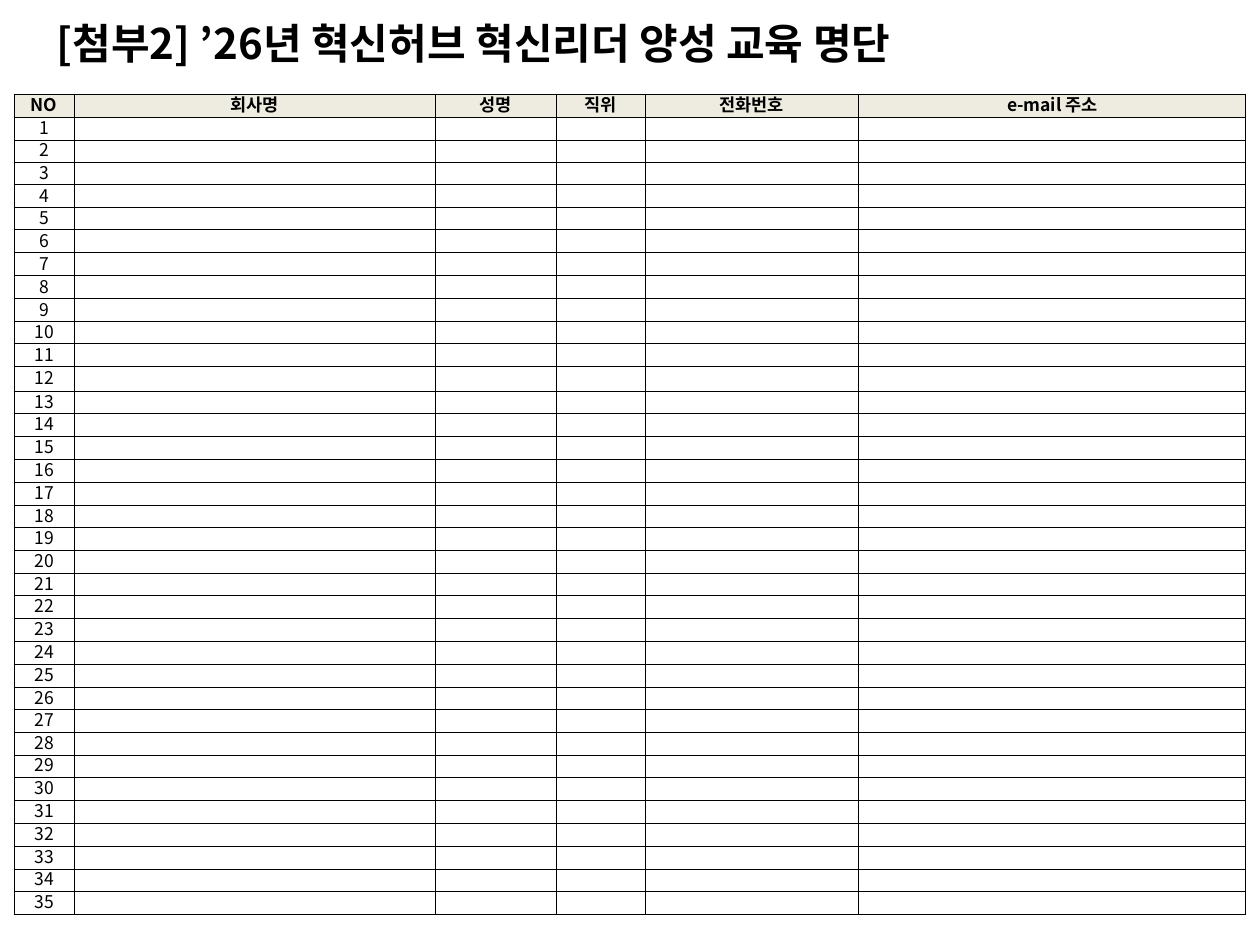
from dataclasses import dataclass

from pptx import Presentation
from pptx.dml.color import RGBColor
from pptx.enum.text import MSO_ANCHOR as Anchor, MSO_AUTO_SIZE as AutoSize, PP_ALIGN as Align
from pptx.oxml.ns import qn
from pptx.slide import Slide
from pptx.util import Inches, Pt
from lxml.etree import SubElement

BLACK = RGBColor(0x00, 0x00, 0x00)
HEADER_FILL = RGBColor(0xEE, 0xEC, 0xE1)
PX = Inches(1) // 126

HEADINGS = ["NO", "회사명", "성명", "직위", "전화번호", "e-mail 주소"]
COLUMN_WIDTHS = [60, 361, 121, 89, 214, 387]
ENTRIES = 35
ROW_PITCH = 22.75
TALL_ROW = 12
TALL_EXTRA = 2


def row_edge(index):
    return round(index * ROW_PITCH) + (TALL_EXTRA if index > TALL_ROW else 0)


@dataclass
class Sheet:
    slide: Slide
    font: str = "Noto Sans CJK KR"
    title_size: int = 24
    cell_size: int = 10
    cell_leading: float = 12.5
    border_width: float = 0.5

    def format_run(self, run, size, bold):
        run.font.size = Pt(size)
        run.font.bold = bold
        run.font.name = self.font
        run.font.color.rgb = BLACK
        run.font._element.set("kern", "0")
        SubElement(run.font._element, qn("a:ea"), typeface=self.font)

    def title(self, text, left, top, width, height):
        title = self.slide.shapes.title
        title.left, title.top = left * PX, top * PX
        title.width, title.height = width * PX, height * PX
        frame = title.text_frame
        frame.text = text
        frame.word_wrap = True
        frame.auto_size = AutoSize.NONE
        frame.vertical_anchor = Anchor.MIDDLE
        frame.paragraphs[0].alignment = Align.LEFT
        self.format_run(frame.paragraphs[0].runs[0], self.title_size, True)

    def border(self, cell):
        properties = cell._tc.get_or_add_tcPr()
        for position, side in enumerate(("a:lnL", "a:lnR", "a:lnT", "a:lnB")):
            line = SubElement(properties, qn(side), w=str(Pt(self.border_width)))
            fill = SubElement(line, qn("a:solidFill"))
            SubElement(fill, qn("a:srgbClr"), val=str(BLACK))
            properties.insert(position, line)

    def cell(self, cell, text, heading):
        cell.margin_left = cell.margin_right = cell.margin_top = cell.margin_bottom = 0
        cell.vertical_anchor = Anchor.MIDDLE
        if heading:
            cell.fill.solid()
            cell.fill.fore_color.rgb = HEADER_FILL
        else:
            cell.fill.background()
        self.border(cell)
        paragraph = cell.text_frame.paragraphs[0]
        paragraph.text = text
        paragraph.alignment = Align.CENTER
        paragraph.line_spacing = Pt(self.cell_leading)
        for run in paragraph.runs:
            self.format_run(run, self.cell_size, heading)
        if not text:
            SubElement(paragraph._p, qn("a:endParaRPr"), sz=str(self.cell_size * 100))

    def table(self, rows, left, top, widths, heights):
        table = self.slide.shapes.add_table(
            len(rows), len(widths), left * PX, top * PX, sum(widths) * PX, sum(heights) * PX
        ).table
        table.horz_banding = False
        for column, width in zip(table.columns, widths):
            column.width = width * PX
        for index, (row, height, texts) in enumerate(zip(table.rows, heights, rows)):
            row.height = height * PX
            for cell, text in zip(row.cells, texts):
                self.cell(cell, text, index == 0)


def main():
    deck = Presentation()
    deck.slide_width, deck.slide_height = Inches(10), Inches(7.5)
    sheet = Sheet(deck.slides.add_slide(deck.slide_layouts[5]))
    sheet.title("[첨부2] ’26년 혁신허브 혁신리더 양성 교육 명단", 44, 11, 1182, 63)
    blanks = [""] * (len(HEADINGS) - 1)
    roster = [HEADINGS] + [[str(number)] + blanks for number in range(1, ENTRIES + 1)]
    heights = [row_edge(i + 1) - row_edge(i) for i in range(len(roster))]
    sheet.table(roster, 14, 94, COLUMN_WIDTHS, heights)
    deck.save("out.pptx")


if __name__ == "__main__":
    main()
